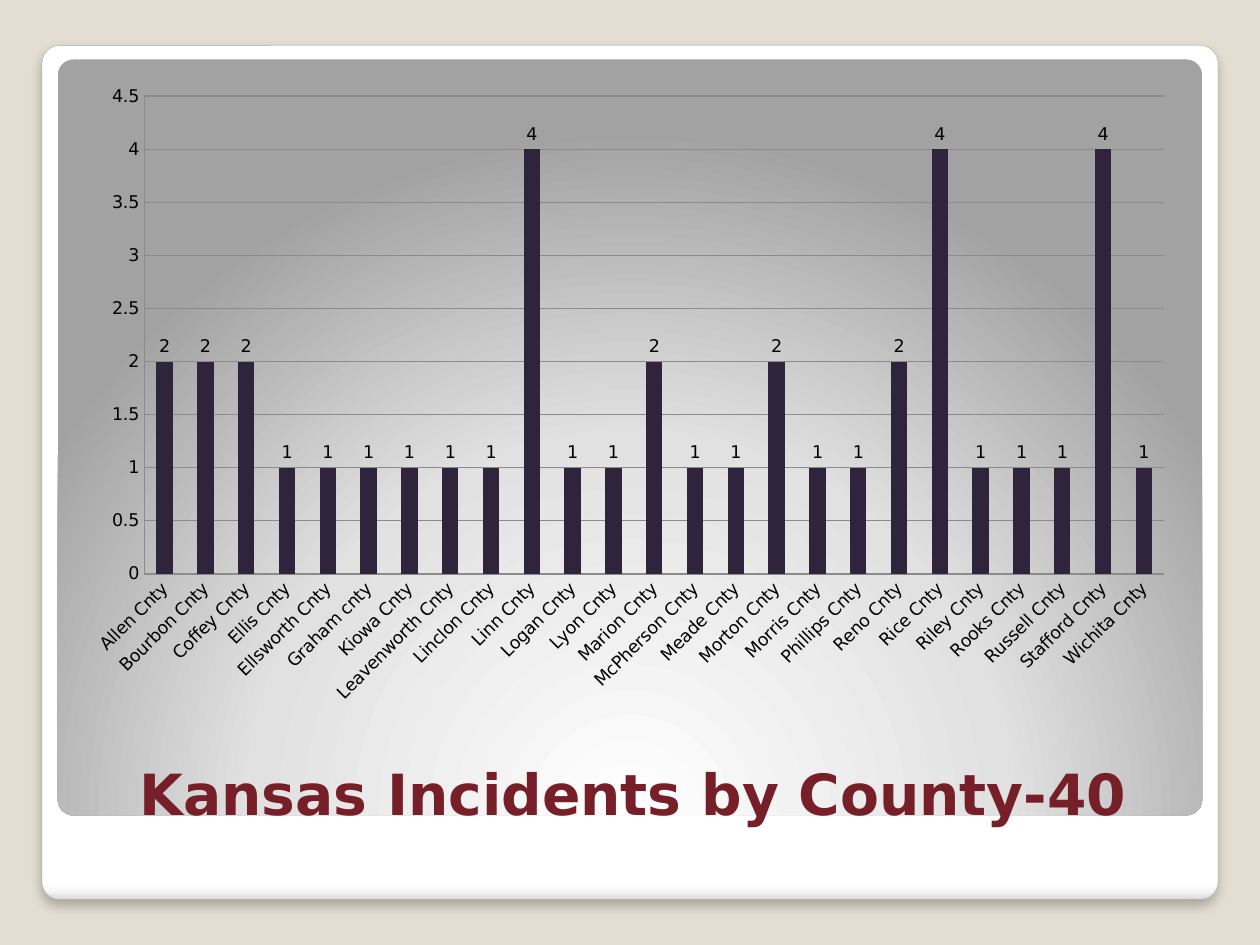
from lxml.etree import SubElement
from pptx import Presentation
from pptx.chart.data import CategoryChartData
from pptx.dml.color import RGBColor
from pptx.enum.chart import XL_CHART_TYPE as ChartType, XL_LABEL_POSITION as LabelPos
from pptx.enum.chart import XL_TICK_MARK as Tick
from pptx.enum.shapes import MSO_SHAPE as Shape
from pptx.enum.text import MSO_ANCHOR as Anchor, PP_ALIGN as Align
from pptx.oxml.ns import qn
from pptx.util import Pt

SAND = RGBColor(0xE3, 0xDE, 0xD1)
WHITE = RGBColor(0xFF, 0xFF, 0xFF)
OFF_WHITE = RGBColor(0xF7, 0xF7, 0xF7)
EDGE = RGBColor(0xDA, 0xDA, 0xDA)
LIGHT = RGBColor(0xE1, 0xE1, 0xE1)
GRAY = RGBColor(0xA2, 0xA2, 0xA2)
OUTLINE = RGBColor(0xA4, 0xA4, 0xA4)
GRID = RGBColor(0x8B, 0x8B, 0x8B)
BLACK = RGBColor(0, 0, 0)
MAROON = RGBColor(0x77, 0x1F, 0x28)
PLUM = RGBColor(0x30, 0x24, 0x3C)

INCIDENTS = {
    "Allen Cnty": 2, "Bourbon Cnty": 2, "Coffey Cnty": 2, "Ellis Cnty": 1,
    "Ellsworth Cnty": 1, "Graham cnty": 1, "Kiowa Cnty": 1,
    "Leavenworth Cnty": 1, "Linclon Cnty": 1, "Linn Cnty": 4,
    "Logan Cnty": 1, "Lyon Cnty": 1, "Marion Cnty": 2, "McPherson Cnty": 1,
    "Meade Cnty": 1, "Morton Cnty": 2, "Morris Cnty": 1, "Phillips Cnty": 1,
    "Reno Cnty": 2, "Rice Cnty": 4, "Riley Cnty": 1, "Rooks Cnty": 1,
    "Russell Cnty": 1, "Stafford Cnty": 4, "Wichita Cnty": 1,
}


def add_color(parent, color):
    return SubElement(parent, qn("a:srgbClr"), val=str(color))


class Deck:
    font = "DejaVu Sans"

    def __init__(self, width, height, background):
        self.prs = Presentation()
        self.prs.slide_width, self.prs.slide_height = Pt(width), Pt(height)
        self.slide = self.prs.slides.add_slide(self.prs.slide_layouts[6])
        fill = self.slide.background.fill
        fill.solid()
        fill.fore_color.rgb = background

    def panel(self, box, stops, focus=None):
        sp = self.slide.shapes.add_shape(Shape.ROUNDED_RECTANGLE, *map(Pt, box))
        sp.adjustments[0] = 0.021
        sp.shadow.inherit = False
        sp.line.fill.background()
        sp.fill.background()
        no_fill = sp._element.spPr.find(qn("a:noFill"))
        grad = SubElement(sp._element.spPr, qn("a:gradFill"), rotWithShape="1")
        no_fill.getparent().replace(no_fill, grad)
        gs_list = SubElement(grad, qn("a:gsLst"))
        for pos, color in stops:
            add_color(SubElement(gs_list, qn("a:gs"), pos=str(pos * 1000)), color)
        if focus:
            circle = SubElement(grad, qn("a:path"), path="circle")
            sides = {side: str(pct * 1000) for side, pct in zip("ltrb", focus)}
            SubElement(circle, qn("a:fillToRect"), **sides)
        else:
            SubElement(grad, qn("a:lin"), ang="5400000", scaled="0")
        return sp

    def outline(self, sp, color, width):
        sp.line.color.rgb = color
        sp.line.width = Pt(width)

    def shadow(self, sp, color, alpha, blur, dist):
        effects = sp._element.spPr.find(qn("a:effectLst"))
        outer = SubElement(effects, qn("a:outerShdw"), blurRad=str(Pt(blur)),
                           dist=str(Pt(dist)), dir="5400000", rotWithShape="0")
        SubElement(add_color(outer, color), qn("a:alpha"), val=str(alpha * 1000))

    def title(self, box, text, size, color):
        tf = self.slide.shapes.add_textbox(*map(Pt, box)).text_frame
        tf.word_wrap = True
        tf.vertical_anchor = Anchor.BOTTOM
        p = tf.paragraphs[0]
        p.alignment = Align.CENTER
        r = p.add_run()
        r.text = text
        r.font.name, r.font.size, r.font.bold = self.font, Pt(size), True
        r.font.color.rgb = color

    def columns(self, box, name, values, color):
        data = CategoryChartData()
        data.categories = list(values)
        data.add_series(name, list(values.values()))
        chart = self.slide.shapes.add_chart(
            ChartType.COLUMN_CLUSTERED, *map(Pt, box), data).chart
        chart.has_legend = chart.has_title = False
        chart.font.name, chart.font.size = self.font, Pt(10)
        chart.font.color.rgb = BLACK
        plot = chart.plots[0]
        plot.gap_width = 150
        plot.vary_by_categories = False
        plot.has_data_labels = True
        plot.data_labels.show_value = True
        plot.data_labels.position = LabelPos.OUTSIDE_END
        fill = plot.series[0].format.fill
        fill.solid()
        fill.fore_color.rgb = color
        grid = chart.value_axis.major_gridlines.format.line
        for axis in (chart.category_axis, chart.value_axis):
            axis.major_tick_mark = axis.minor_tick_mark = Tick.NONE
            axis.format.line.color.rgb = GRID
            axis.format.line.width = Pt(0.75)
        grid.color.rgb = GRID
        grid.width = Pt(0.75)
        scale = chart.value_axis
        scale.minimum_scale, scale.maximum_scale, scale.major_unit = 0, 4.5, 0.5
        labels = chart.category_axis.tick_labels
        labels.font.size = Pt(10)
        body = chart.category_axis._element.find(qn("c:txPr")).find(qn("a:bodyPr"))
        body.set("rot", "-2700000")


def main():
    deck = Deck(720, 540, SAND)
    frame = deck.panel((24, 26, 672, 488),
                       [(0, WHITE), (98, WHITE), (99, OFF_WHITE), (100, EDGE)])
    deck.outline(frame, OUTLINE, 0.16)
    deck.shadow(frame, BLACK, 25, 6, 4)
    deck.panel((33, 34, 654, 432), [(0, WHITE), (55, LIGHT), (100, GRAY)],
               focus=(50, 175, 50, -75))
    deck.title((39.6, 426, 644.4, 50), "Kansas Incidents by County-40", 32.4, MAROON)
    deck.columns((42, 42, 636, 367), "Series 1", INCIDENTS, PLUM)
    deck.prs.save("out.pptx")


if __name__ == "__main__":
    main()
